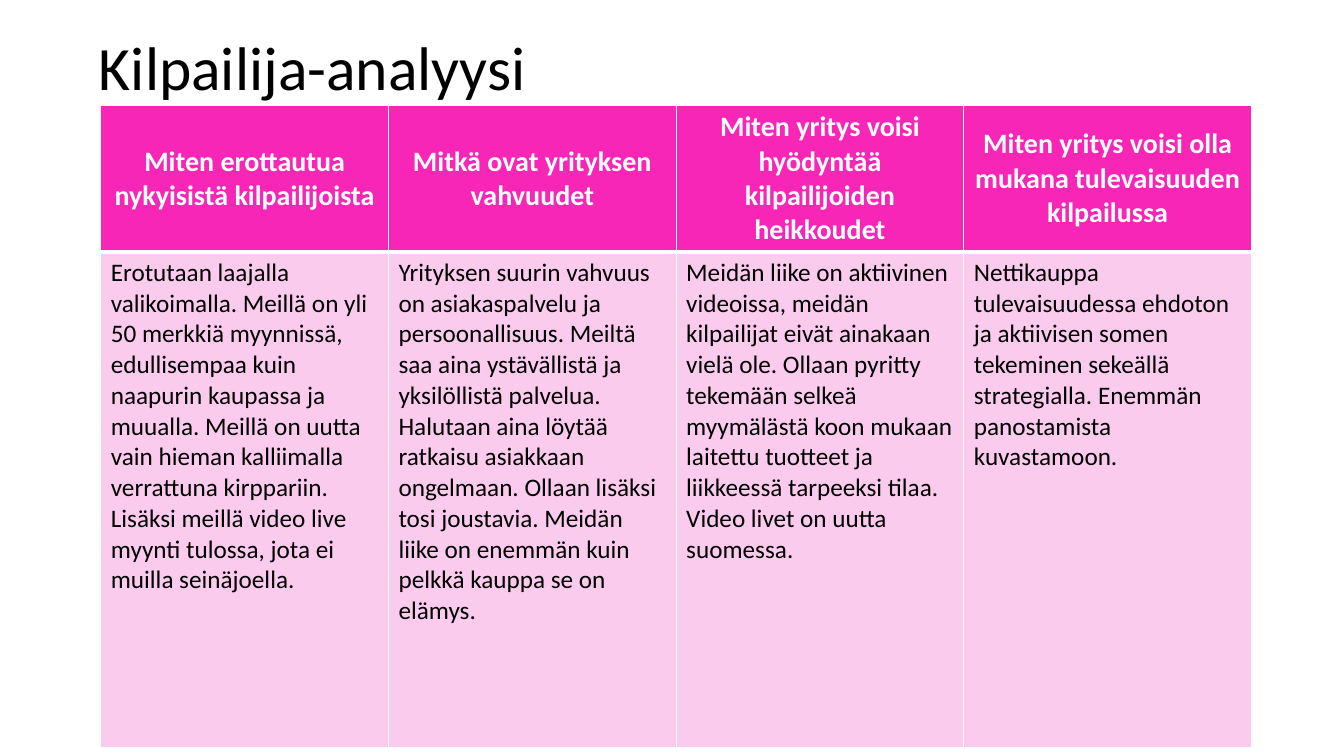
import pptx
import pptx.util
import pptx.dml.color
import pptx.enum.text
import lxml.etree
from dataclasses import dataclass

# Content
TITLE = "Kilpailija-analyysi"
COLUMNS = [
    ("Miten erottautua nykyisistä kilpailijoista",
     "Erotutaan laajalla valikoimalla. Meillä on yli 50 merkkiä myynnissä, "
     "edullisempaa kuin naapurin kaupassa ja muualla. Meillä on uutta "
     "vain hieman kalliimalla verrattuna kirppariin. Lisäksi meillä video "
     "live myynti tulossa, jota ei muilla seinäjoella."),
    ("Mitkä ovat yrityksen vahvuudet",
     "Yrityksen suurin vahvuus on asiakaspalvelu ja persoonallisuus. Meiltä "
     "saa aina ystävällistä ja yksilöllistä palvelua. Halutaan aina löytää "
     "ratkaisu asiakkaan ongelmaan. Ollaan lisäksi tosi joustavia. Meidän "
     "liike on enemmän kuin pelkkä kauppa se on elämys."),
    ("Miten yritys voisi hyödyntää kilpailijoiden heikkoudet",
     "Meidän liike on aktiivinen videoissa, meidän kilpailijat eivät ainakaan "
     "vielä ole. Ollaan pyritty tekemään selkeä myymälästä koon mukaan "
     "laitettu tuotteet ja liikkeessä tarpeeksi tilaa. Video livet on uutta "
     "suomessa."),
    ("Miten yritys voisi olla mukana tulevaisuuden kilpailussa",
     "Nettikauppa tulevaisuudessa ehdoton ja aktiivisen somen tekeminen "
     "sekeällä strategialla. Enemmän panostamista kuvastamoon."),
]


@dataclass
class Theme:
    font: str = "Calibri"
    title: int = 44
    head: int = 20
    body: int = 18
    black: str = "000000"
    white: str = "FFFFFF"
    pink: str = "F826B7"
    pale: str = "FBCBEE"


theme = Theme()
Pt = pptx.util.Pt
LEFT, TOP, WIDTH = 72, 75, 822
ROWS = [95, 354]
THIN, THICK = 1, 3


def rgb(code):
    return pptx.dml.color.RGBColor.from_string(code)


def style(par, size, color, bold=False):
    par.font.name = theme.font
    par.font.size = Pt(size)
    par.font.bold = bold
    par.font.color.rgb = rgb(color)


def border(cell, sides):
    props = cell._tc.get_or_add_tcPr()
    for side, width in sides.items():
        line = lxml.etree.SubElement(
            props, pptx.oxml.ns.qn(f"a:ln{side}"), w=str(Pt(width)))
        fill = lxml.etree.SubElement(line, pptx.oxml.ns.qn("a:solidFill"))
        lxml.etree.SubElement(
            fill, pptx.oxml.ns.qn("a:srgbClr"), val=theme.white)


def main():
    deck = pptx.Presentation()
    deck.slide_width, deck.slide_height = Pt(960), Pt(540)
    slide = deck.slides.add_slide(deck.slide_layouts[5])

    # Table
    table = slide.shapes.add_table(
        len(ROWS), len(COLUMNS), Pt(LEFT), Pt(TOP),
        Pt(WIDTH), Pt(sum(ROWS))).table
    for row, height in zip(table.rows, ROWS):
        row.height = Pt(height)
    for col, texts in enumerate(COLUMNS):
        for row, text in enumerate(texts):
            cell = table.cell(row, col)
            cell.text = text
            par = cell.text_frame.paragraphs[0]
            is_head = row == 0
            border(cell, {"L": THIN, "R": THIN,
                          "T": THIN if is_head else THICK,
                          "B": THICK if is_head else THIN})
            cell.fill.solid()
            cell.fill.fore_color.rgb = rgb(theme.pink if is_head else theme.pale)
            if is_head:
                cell.vertical_anchor = pptx.enum.text.MSO_ANCHOR.MIDDLE
                par.alignment = pptx.enum.text.PP_ALIGN.CENTER
                style(par, theme.head, theme.white, True)
            else:
                style(par, theme.body, theme.black)

    # Title
    title = slide.shapes.title
    title.left, title.top = Pt(63.5), Pt(0)
    title.width, title.height = Pt(571), Pt(101)
    frame = title.text_frame
    frame.text = TITLE
    frame.auto_size = pptx.enum.text.MSO_AUTO_SIZE.NONE
    frame.vertical_anchor = pptx.enum.text.MSO_ANCHOR.MIDDLE
    par = frame.paragraphs[0]
    par.alignment = pptx.enum.text.PP_ALIGN.LEFT
    par.line_spacing = 0.9
    style(par, theme.title, theme.black)

    deck.save("out.pptx")


if __name__ == "__main__":
    main()
